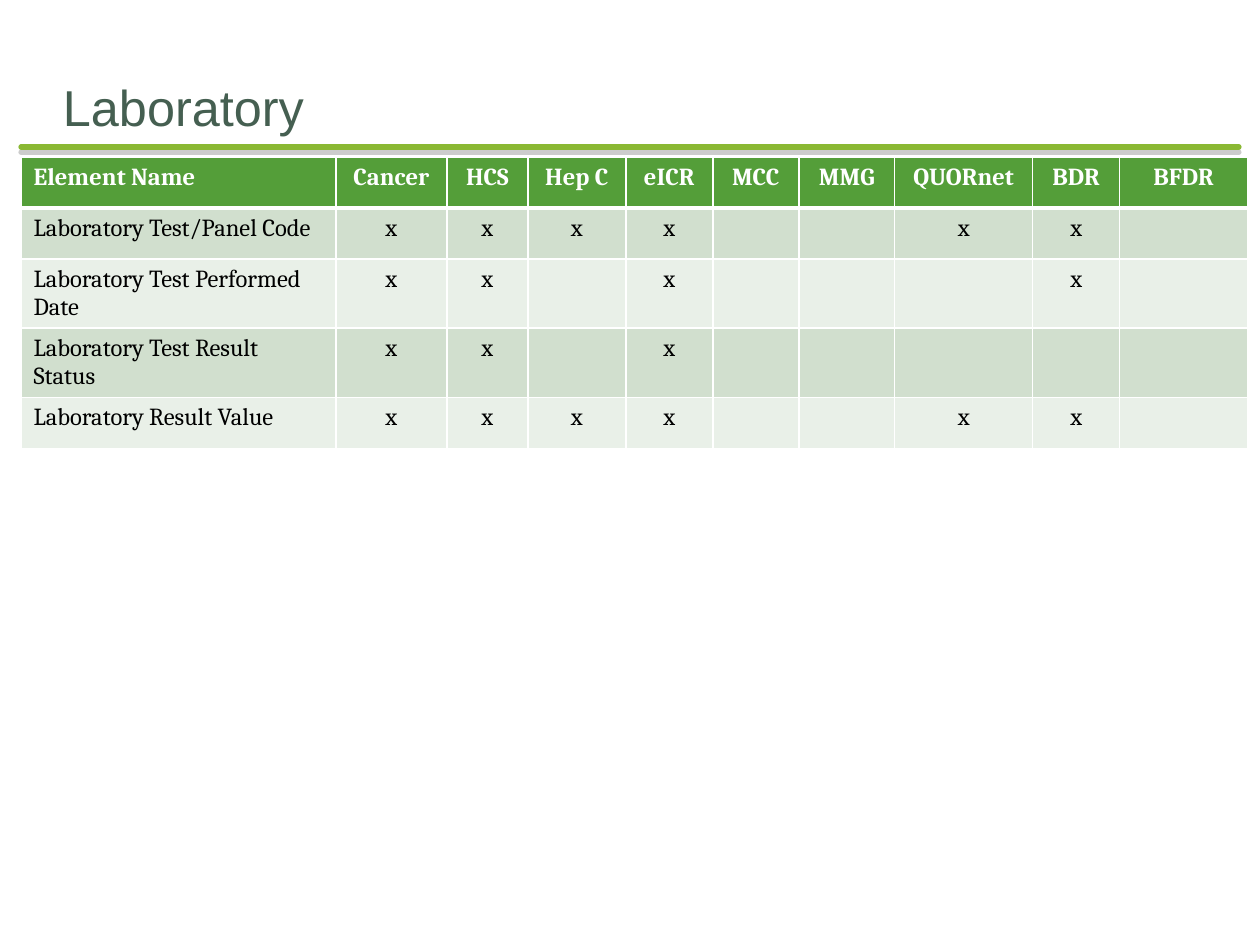
from lxml import etree
from pptx import Presentation
from pptx import util as u
from pptx.dml.color import RGBColor
from pptx.enum import shapes, text
from pptx.oxml import parse_xml
from pptx.oxml.ns import qn

PX = 914400 // 126
DRAWING_NS = "http://schemas.openxmlformats.org/drawingml/2006/main"

WHITE = RGBColor(0xFF, 0xFF, 0xFF)
BLACK = RGBColor(0x00, 0x00, 0x00)
SLATE = RGBColor(0x45, 0x5F, 0x51)
LIME = RGBColor(0x8A, 0xB8, 0x33)
GREEN = RGBColor(0x54, 0x9E, 0x39)
BANDS = [RGBColor(0xD1, 0xDF, 0xCE), RGBColor(0xE9, 0xF0, 0xE8)]

TITLE_FONT = {"name": "Arial", "size": u.Pt(28.8), "color": SLATE}
HEADER_FONT = {"name": "Cambria", "size": u.Pt(14), "bold": True, "color": WHITE}
BODY_FONT = {"name": "Cambria", "size": u.Pt(14), "bold": False, "color": BLACK}

COLUMNS = {"Element Name": 315, "Cancer": 111, "HCS": 81, "Hep C": 98, "eICR": 87,
           "MCC": 86, "MMG": 96, "QUORnet": 138, "BDR": 87, "BFDR": 128}
ROW_HEIGHT = 51
ELEMENTS = {
    "Laboratory Test/Panel Code": ["Cancer", "HCS", "Hep C", "eICR", "QUORnet", "BDR"],
    "Laboratory Test Performed Date": ["Cancer", "HCS", "eICR", "BDR"],
    "Laboratory Test Result Status": ["Cancer", "HCS", "eICR"],
    "Laboratory Result Value": ["Cancer", "HCS", "Hep C", "eICR", "QUORnet", "BDR"],
}


def px(*lengths):
    return [u.Emu(length * PX) for length in lengths]


def write(para, words, font):
    span = para.add_run()
    span.text = words
    for name, value in font.items():
        if name == "color":
            span.font.color.rgb = value
        else:
            setattr(span.font, name, value)


def add_title(page, words):
    box = page.shapes.add_textbox(*px(63, 64, 1134, 73))
    frame = box.text_frame
    layout = {"word_wrap": True, "vertical_anchor": text.MSO_ANCHOR.BOTTOM,
              "margin_left": 0, "margin_right": 0,
              "margin_top": u.Inches(0.05), "margin_bottom": 0}
    for name, value in layout.items():
        setattr(frame, name, value)
    write(frame.paragraphs[0], words, TITLE_FONT)


def add_rule(page):
    """Draw the round-ended line under the title, with its grey shadow."""
    rule = page.shapes.add_connector(shapes.MSO_CONNECTOR.STRAIGHT, *px(21, 147, 1239, 147))
    rule.line.color.rgb = LIME
    rule.line.width = u.Pt(3)
    rule.line._get_or_add_ln().set("cap", "rnd")
    rule._element.spPr.append(parse_xml(
        f'<a:effectLst xmlns:a="{DRAWING_NS}">'
        f'<a:outerShdw dist="{u.Pt(3)}" dir="5400000" algn="ctr" rotWithShape="0">'
        '<a:srgbClr val="808080"><a:alpha val="40000"/></a:srgbClr>'
        '</a:outerShdw></a:effectLst>'))


def set_borders(cell, widths):
    props = cell._tc.get_or_add_tcPr()
    for index, (side, points) in enumerate(widths.items()):
        line = etree.Element(qn(f"a:ln{side}"), w=str(u.Pt(points)))
        fill = etree.SubElement(line, qn("a:solidFill"))
        etree.SubElement(fill, qn("a:srgbClr"), val=str(WHITE))
        props.insert(index, line)


def fill_cell(cell, words, font, color, centred, top, bottom):
    cell.fill.solid()
    cell.fill.fore_color.rgb = color
    cell.margin_bottom = px(4)[0]
    set_borders(cell, {"L": 1, "R": 1, "T": top, "B": bottom})
    para = cell.text_frame.paragraphs[0]
    if centred:
        para.alignment = text.PP_ALIGN.CENTER
    if words:
        write(para, words, font)


def add_element_table(page):
    rows = [list(COLUMNS)]
    for element, sources in ELEMENTS.items():
        marks = ["x" if name in sources else "" for name in list(COLUMNS)[1:]]
        rows.append([element, *marks])
    size = sum(COLUMNS.values()), ROW_HEIGHT * len(rows)
    table = page.shapes.add_table(len(rows), len(COLUMNS), *px(21, 157, *size)).table
    for column, width in zip(table.columns, px(*COLUMNS.values())):
        column.width = width
    for r, words in enumerate(rows):
        table.rows[r].height = px(ROW_HEIGHT)[0]
        font = BODY_FONT if r else HEADER_FONT
        color = BANDS[(r - 1) % 2] if r else GREEN
        top, bottom = 3 if r == 1 else 1, 1 if r else 3
        for c, word in enumerate(words):
            fill_cell(table.cell(r, c), word, font, color, c > 0, top, bottom)


def main():
    deck = Presentation()
    deck.slide_width, deck.slide_height = px(1260, 945)
    page = deck.slides.add_slide(deck.slide_layouts[6])
    add_rule(page)
    add_title(page, "Laboratory")
    add_element_table(page)
    deck.save("out.pptx")


if __name__ == "__main__":
    main()
